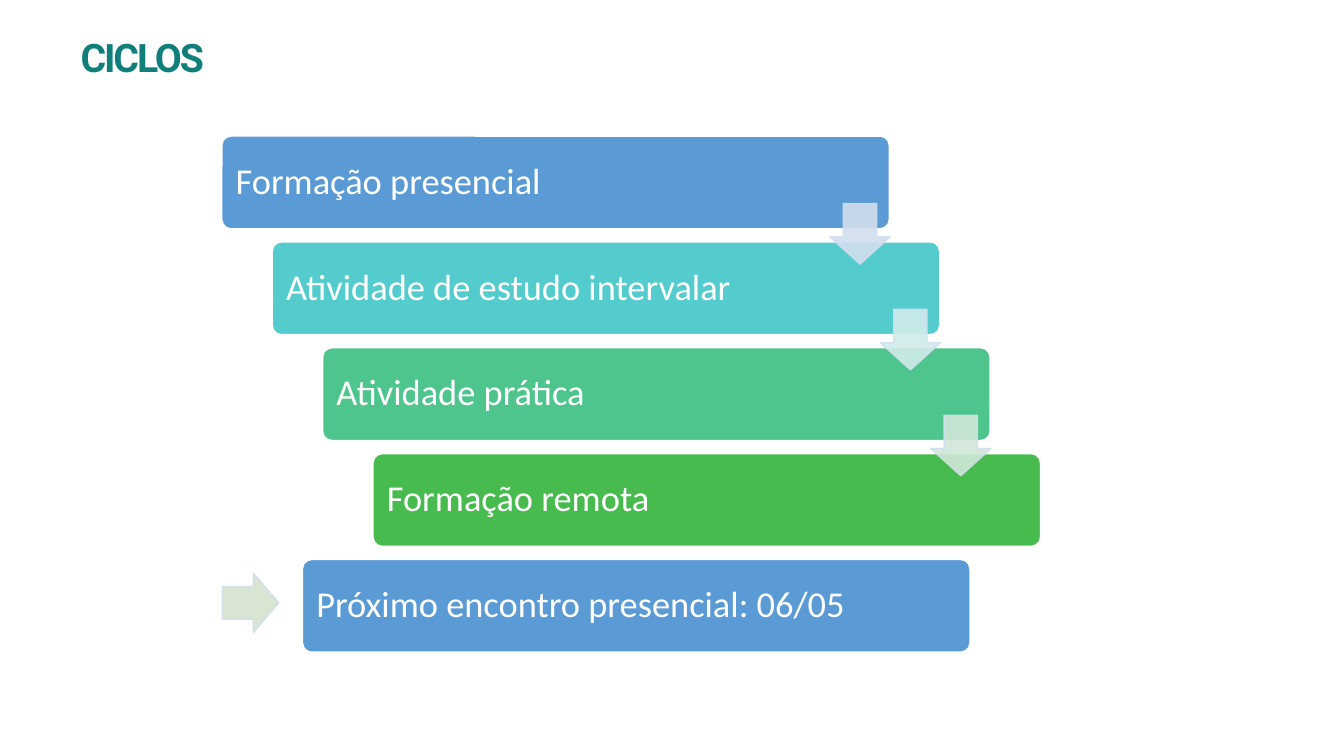
from dataclasses import dataclass

from lxml import etree
from pptx import Presentation
from pptx.dml.color import RGBColor
from pptx.enum.shapes import MSO_SHAPE
from pptx.enum.text import MSO_ANCHOR, PP_ALIGN
from pptx.oxml.ns import qn
from pptx.util import Emu, Pt

ROUNDED = MSO_SHAPE.ROUNDED_RECTANGLE
DOWN_ARROW = MSO_SHAPE.DOWN_ARROW
TOP, MIDDLE = MSO_ANCHOR.TOP, MSO_ANCHOR.MIDDLE
LEFT = PP_ALIGN.LEFT
TITLE_ONLY = 5
EMU_PER_PX = 9144


@dataclass(frozen=True)
class Theme:
    title_font: str = "Roboto"
    body_font: str = "Calibri"
    title_size: int = 28
    body_size: int = 26
    title_color: str = "107F7B"
    white: str = "FFFFFF"
    arrow_line: str = "D2DEEF"
    bar_fills: tuple = ("5B9BD5", "54CCCD", "4DC58D", "48BB4F", "5B9BD5")
    arrow_fills: tuple = ("D2DEEF", "D0ECEA", "D0E7D8", "D5E3CF")
    arrow_opacity: int = 90


def px(value):
    return Emu(value * EMU_PER_PX)


def write_text(frame, text, *, font, size, color, bold=False, tracking=0,
               line_spacing=1.0, anchor=MIDDLE, margins=(11, 11, 11, 11)):
    frame.word_wrap = True
    frame.vertical_anchor = anchor
    (frame.margin_left, frame.margin_top,
     frame.margin_right, frame.margin_bottom) = map(px, margins)
    paragraph = frame.paragraphs[0]
    paragraph.alignment = LEFT
    paragraph.line_spacing = line_spacing
    run = paragraph.add_run()
    run.text = text
    run.font.name = font
    run.font.size = Pt(size)
    run.font.bold = bold
    run.font.color.rgb = RGBColor.from_string(color)
    if tracking:
        run._r.get_or_add_rPr().set("spc", str(round(tracking * 100)))


class SlideBuilder:
    """Draws the elements of one slide in a shared theme."""

    def __init__(self, presentation, theme):
        self.theme = theme
        self.slide = presentation.slides.add_slide(
            presentation.slide_layouts[TITLE_ONLY])

    def title(self, text, left, top, width, height):
        shape = self.slide.shapes.title
        shape.left, shape.top, shape.width, shape.height = map(
            px, (left, top, width, height))
        write_text(shape.text_frame, text, font=self.theme.title_font,
                   size=self.theme.title_size, color=self.theme.title_color,
                   bold=True, tracking=-1.5, anchor=TOP,
                   margins=(10, 5, 10, 5))

    def block(self, kind, box, fill, line, adjustments):
        shape = self.slide.shapes.add_shape(kind, *map(px, box))
        shape.shadow.inherit = False
        for index, value in enumerate(adjustments):
            shape.adjustments[index] = value
        shape.fill.solid()
        shape.fill.fore_color.rgb = RGBColor.from_string(fill)
        shape.line.color.rgb = RGBColor.from_string(line)
        shape.line.width = Pt(1)
        return shape

    def bar(self, text, box, fill):
        shape = self.block(ROUNDED, box, fill, self.theme.white, [0.1])
        write_text(shape.text_frame, text, font=self.theme.body_font,
                   size=self.theme.body_size, color=self.theme.white,
                   line_spacing=0.9)

    def arrow(self, box, fill, rotation=0):
        shape = self.block(DOWN_ARROW, box, fill, self.theme.arrow_line,
                           [0.55, 0.45])
        shape.rotation = rotation
        for color in shape._element.spPr.iter(qn("a:srgbClr")):
            alpha = etree.SubElement(color, qn("a:alpha"))
            alpha.set("val", str(self.theme.arrow_opacity * 1000))


def main():
    presentation = Presentation()
    presentation.slide_width, presentation.slide_height = px(1333), px(750)
    theme = Theme()
    builder = SlideBuilder(presentation, theme)
    builder.title("CICLOS", 70, 28, 1209, 125)

    steps = ["Formação presencial", "Atividade de estudo intervalar",
             "Atividade prática", "Formação remota",
             "Próximo encontro presencial: 06/05"]
    first_left, first_top, step_x, step_y = 220, 135, 50, 105
    lefts = [first_left + step_x * index for index in range(4)] + [300]
    tops = [first_top + step_y * index for index in range(5)]
    for text, left, top, fill in zip(steps, lefts, tops, theme.bar_fills):
        builder.bar(text, (left, top, 662, 92), fill)

    *down_fills, next_fill = theme.arrow_fills
    for left, top, fill in zip(lefts, tops, down_fills):
        builder.arrow((left + 603, top + 67, 60, 60), fill)
    builder.arrow((219, 570, 59, 56), next_fill, rotation=270)
    presentation.save("out.pptx")


if __name__ == "__main__":
    main()
